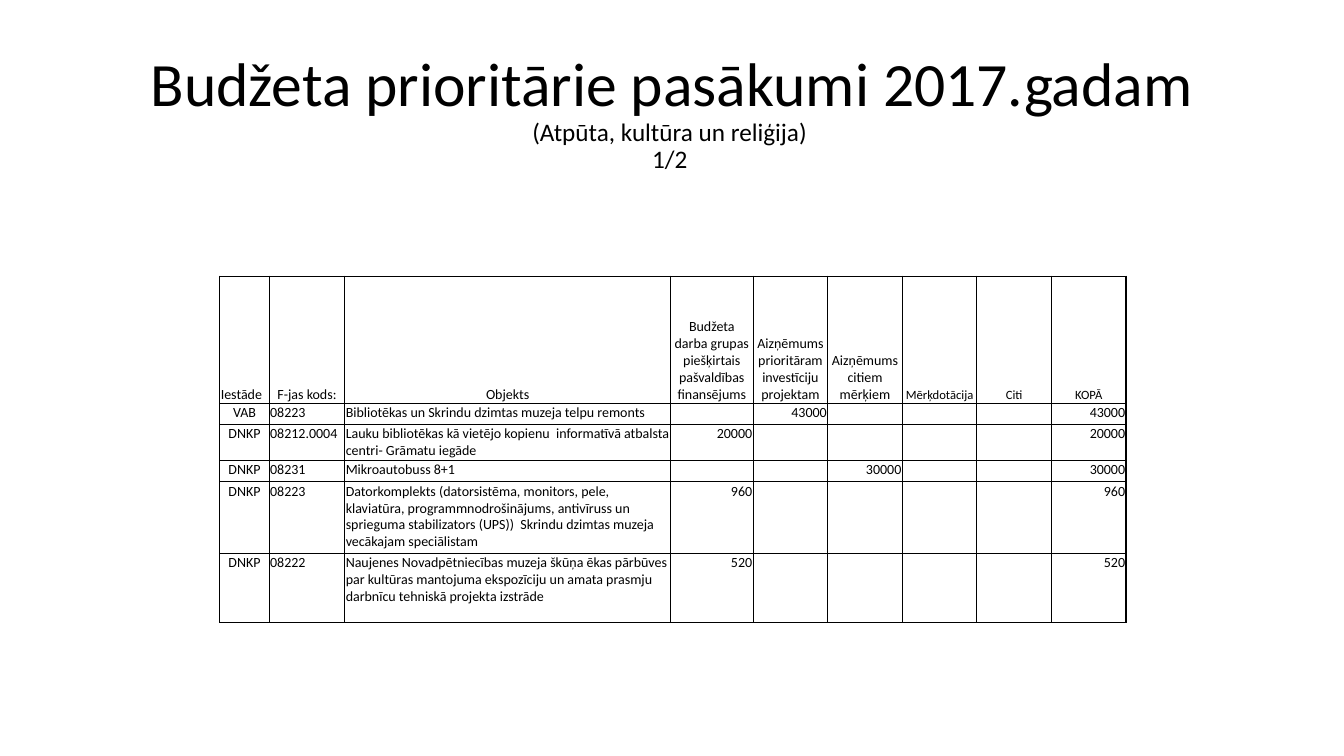
from lxml.etree import SubElement
from pptx import Presentation
from pptx.dml.color import RGBColor
from pptx.enum.text import MSO_ANCHOR as Anchor, PP_ALIGN as Align
from pptx.oxml.ns import qn
from pptx.util import Inches, Pt

FONT, INK = "Calibri", "000000"


def rgb(value):
    return RGBColor.from_string(value)


def add_lines(paragraph, text, size):
    """Add one run per line, with breaks of the same text size."""
    for i, line in enumerate(text.split("\n")):
        if i:
            paragraph.add_line_break()
            SubElement(paragraph._p[-1], qn("a:rPr"), sz=str(size * 100))
        if line:
            run = paragraph.add_run()
            run.text = line
            run.font.size = Pt(size)
            run.font.name = FONT
            run.font.color.rgb = rgb(INK)


prs = Presentation()
prs.slide_width, prs.slide_height = Inches(13.33), Inches(7.5)
slide = prs.slides.add_slide(prs.slide_layouts[5])

# Title
title = slide.shapes.title
title.left, title.top = Inches(0.92), Inches(0.4)
title.width, title.height = Inches(11.5), Inches(1.45)
title.text_frame.vertical_anchor = Anchor.MIDDLE
heading = title.text_frame.paragraphs[0]
heading.alignment = Align.CENTER
heading.line_spacing = 0.9
add_lines(heading, "Budžeta prioritārie pasākumi 2017.gadam", 44)
add_lines(heading, "\n(Atpūta, kultūra un reliģija) \n1/2 ", 18)

# Budget table content
headers = ["Iestāde", "F-jas kods:", "Objekts",
           "Budžeta darba grupas\npiešķirtais pašvaldības finansējums",
           "Aizņēmums prioritāram investīciju projektam",
           "Aizņēmums citiem mērķiem", "Mērķdotācija", "Citi", "KOPĀ"]
BUDGET, PROJECT_LOAN, OTHER_LOAN, TOTAL = 3, 4, 5, 8
# institution, code, object, funding column, amount
measures = [
    ("VAB", "08223", "Bibliotēkas un Skrindu dzimtas muzeja telpu remonts",
     PROJECT_LOAN, 43000),
    ("DNKP", "08212.0004",
     "Lauku bibliotēkas kā vietējo kopienu  informatīvā atbalsta centri- Grāmatu iegāde",
     BUDGET, 20000),
    ("DNKP", "08231", "Mikroautobuss 8+1", OTHER_LOAN, 30000),
    ("DNKP", "08223",
     "Datorkomplekts (datorsistēma, monitors, pele, klaviatūra, programmnodrošinājums, "
     "antivīruss un sprieguma stabilizators (UPS))  Skrindu dzimtas muzeja vecākajam speciālistam",
     BUDGET, 960),
    ("DNKP", "08222",
     "Naujenes Novadpētniecības muzeja škūņa ēkas pārbūves par kultūras mantojuma ekspozīciju "
     "un amata prasmju darbnīcu tehniskā projekta izstrāde",
     BUDGET, 520),
]
rows = [headers]
for institution, code, purpose, funding, amount in measures:
    row = [institution, code, purpose] + [""] * 6
    row[funding] = row[TOTAL] = str(amount)
    rows.append(row)

# Table grid
widths = [0.49, 0.75, 3.23, 0.82] + [0.74] * 5
heights = [1.26, 0.21, 0.36, 0.21, 0.71, 0.69]
budget = slide.shapes.add_table(len(rows), len(widths), Inches(2.18), Inches(2.74),
                                Inches(sum(widths)), Inches(sum(heights))).table
budget.first_row = budget.horz_banding = False
for column, width in zip(budget.columns, widths):
    column.width = Inches(width)
for line, height in zip(budget.rows, heights):
    line.height = Inches(height)

# Cells
for r, row in enumerate(rows):
    for c, text in enumerate(row):
        cell = budget.cell(r, c)
        cell.margin_left = cell.margin_right = cell.margin_top = Inches(0.01)
        cell.margin_bottom = 0
        cell.vertical_anchor = Anchor.TOP if r else Anchor.BOTTOM
        paragraph = cell.text_frame.paragraphs[0]
        if r == 0:
            paragraph.alignment = Align.CENTER if c else Align.LEFT
        elif c >= BUDGET:
            paragraph.alignment = Align.RIGHT
        else:
            paragraph.alignment = Align.LEFT if c else Align.CENTER
        size = 9 if r == 0 and c > OTHER_LOAN else 10
        add_lines(paragraph, text, size)
        if not text:
            SubElement(paragraph._p, qn("a:endParaRPr"), sz=str(size * 100))
        # Borders come before the fill in the cell properties
        properties = cell._tc.get_or_add_tcPr()
        for side in ("a:lnL", "a:lnR", "a:lnT", "a:lnB"):
            border = SubElement(properties, qn(side), w=str(Pt(1)))
            SubElement(SubElement(border, qn("a:solidFill")), qn("a:srgbClr"), val=INK)
        cell.fill.background()

prs.save("out.pptx")
